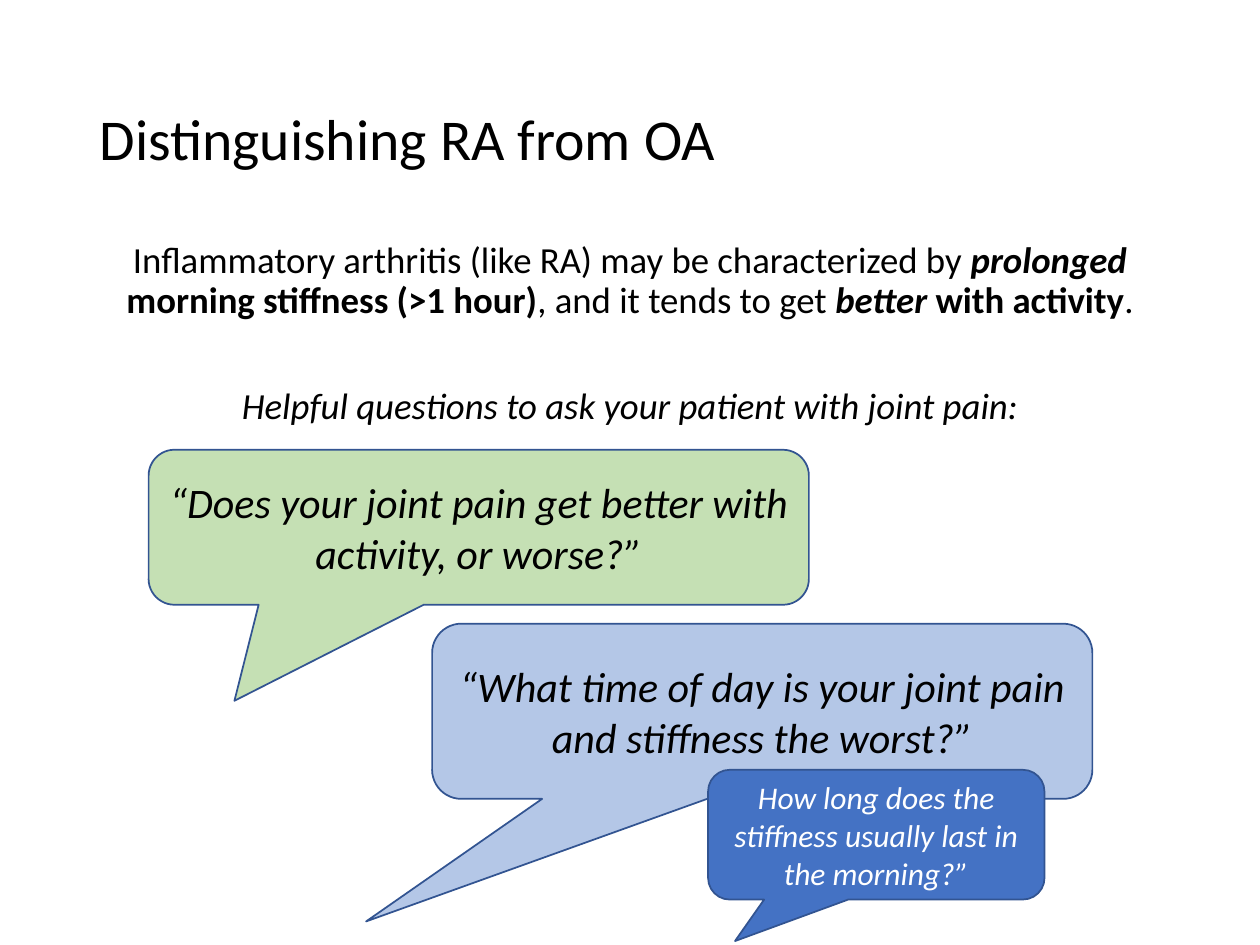
import pptx
import pptx.util
import pptx.dml.color
import pptx.enum.shapes
import pptx.enum.text
import pptx.oxml
from dataclasses import dataclass
from pptx.util import Inches

ALIGN = pptx.enum.text.PP_ALIGN
ANCHOR = pptx.enum.text.MSO_ANCHOR


@dataclass(frozen=True)
class Theme:
    font: str = "Calibri"
    ink: str = "000000"
    white: str = "FFFFFF"
    green: str = "C5E0B4"
    pale_blue: str = "B4C7E7"
    blue: str = "4472C4"
    outline: str = "325491"
    title_size: int = 33
    body_size: int = 21
    question_size: int = 24
    follow_up_size: int = 18


class SlideBuilder:
    """Holds the style and the current slide."""

    def __init__(self, slide, theme):
        self.slide = slide
        self.theme = theme

    def style(self, font, size, color, bold=False, italic=False):
        font.name = self.theme.font
        font.size = pptx.util.Pt(size)
        font.color.rgb = pptx.dml.color.RGBColor.from_string(color)
        font.bold = bold
        font.italic = italic

    def place(self, box, left, top, width, height):
        box.left, box.top = Inches(left), Inches(top)
        box.width, box.height = Inches(width), Inches(height)

    def title(self, text, bounds):
        box = self.slide.shapes.title
        self.place(box, *bounds)
        frame = box.text_frame
        frame.text = text
        frame.auto_size = pptx.enum.text.MSO_AUTO_SIZE.NONE
        frame.vertical_anchor = ANCHOR.MIDDLE
        para = frame.paragraphs[0]
        para.alignment = ALIGN.LEFT
        para.line_spacing = 0.9
        self.style(para.runs[0].font, self.theme.title_size, self.theme.ink)

    def body(self, paragraphs, bounds):
        """Each paragraph is (space before, [(text, marks)]); marks hold b and i."""
        box = self.slide.placeholders[1]
        self.place(box, *bounds)
        frame = box.text_frame
        frame.auto_size = pptx.enum.text.MSO_AUTO_SIZE.NONE
        for index, (space_before, pieces) in enumerate(paragraphs):
            para = frame.add_paragraph() if index else frame.paragraphs[0]
            # Plain centred text instead of the template's bullets
            properties = para._p.get_or_add_pPr()
            properties.set("marL", "0")
            properties.set("indent", "0")
            properties.append(pptx.oxml.parse_xml(
                '<a:buNone xmlns:a="http://schemas.openxmlformats.org/drawingml/2006/main"/>'))
            para.alignment = ALIGN.CENTER
            para.line_spacing = 0.9
            para.space_before = pptx.util.Pt(space_before)
            for text, marks in pieces:
                span = para.add_run()
                span.text = text
                self.style(span.font, self.theme.body_size, self.theme.ink,
                           bold="b" in marks, italic="i" in marks)

    def callout(self, text, bounds, tail, fill, size, color):
        box = self.slide.shapes.add_shape(
            pptx.enum.shapes.MSO_SHAPE.ROUNDED_RECTANGULAR_CALLOUT,
            *(Inches(length) for length in bounds))
        box.adjustments[0], box.adjustments[1] = tail
        box.shadow.inherit = False
        box.fill.solid()
        box.fill.fore_color.rgb = pptx.dml.color.RGBColor.from_string(fill)
        box.line.color.rgb = pptx.dml.color.RGBColor.from_string(self.theme.outline)
        box.line.width = pptx.util.Pt(1)
        frame = box.text_frame
        frame.text = text
        frame.word_wrap = True
        frame.vertical_anchor = ANCHOR.MIDDLE
        para = frame.paragraphs[0]
        para.alignment = ALIGN.CENTER
        self.style(para.runs[0].font, size, color, italic=True)


def main():
    deck = pptx.Presentation()
    deck.slide_width, deck.slide_height = Inches(10), Inches(7.5)
    theme = Theme()
    page = SlideBuilder(deck.slides.add_slide(deck.slide_layouts[1]), theme)

    # Title and introduction
    page.title("Distinguishing RA from OA", (0.69, 0.4, 8.62, 1.45))
    page.body([
        (0, [("Inflammatory arthritis (like RA) may be characterized by ", ""),
             ("prolonged", "bi"),
             (" morning stiffness (>1 hour)", "b"),
             (", and it tends to get ", ""),
             ("better ", "bi"),
             ("with activity", "b"),
             (".", "")]),
        (38, [("Helpful questions to ask your patient with joint pain:", "i")]),
    ], (0.69, 1.87, 8.62, 4.76))

    # Questions in speech bubbles, back to front
    page.callout("“Does your joint pain get better with activity, or worse?”",
                 (1.18, 3.57, 5.24, 1.23), (-0.37, 1.12),
                 theme.green, theme.question_size, theme.ink)
    page.callout("“What time of day is your joint pain and stiffness the worst?”",
                 (3.43, 4.95, 5.24, 1.39), (-0.6, 1.2),
                 theme.pale_blue, theme.question_size, theme.ink)
    page.callout("How long does the stiffness usually last in the morning?”",
                 (5.62, 6.11, 2.67, 1.03), (-0.42, 0.82),
                 theme.blue, theme.follow_up_size, theme.white)

    deck.save("out.pptx")


if __name__ == "__main__":
    main()
